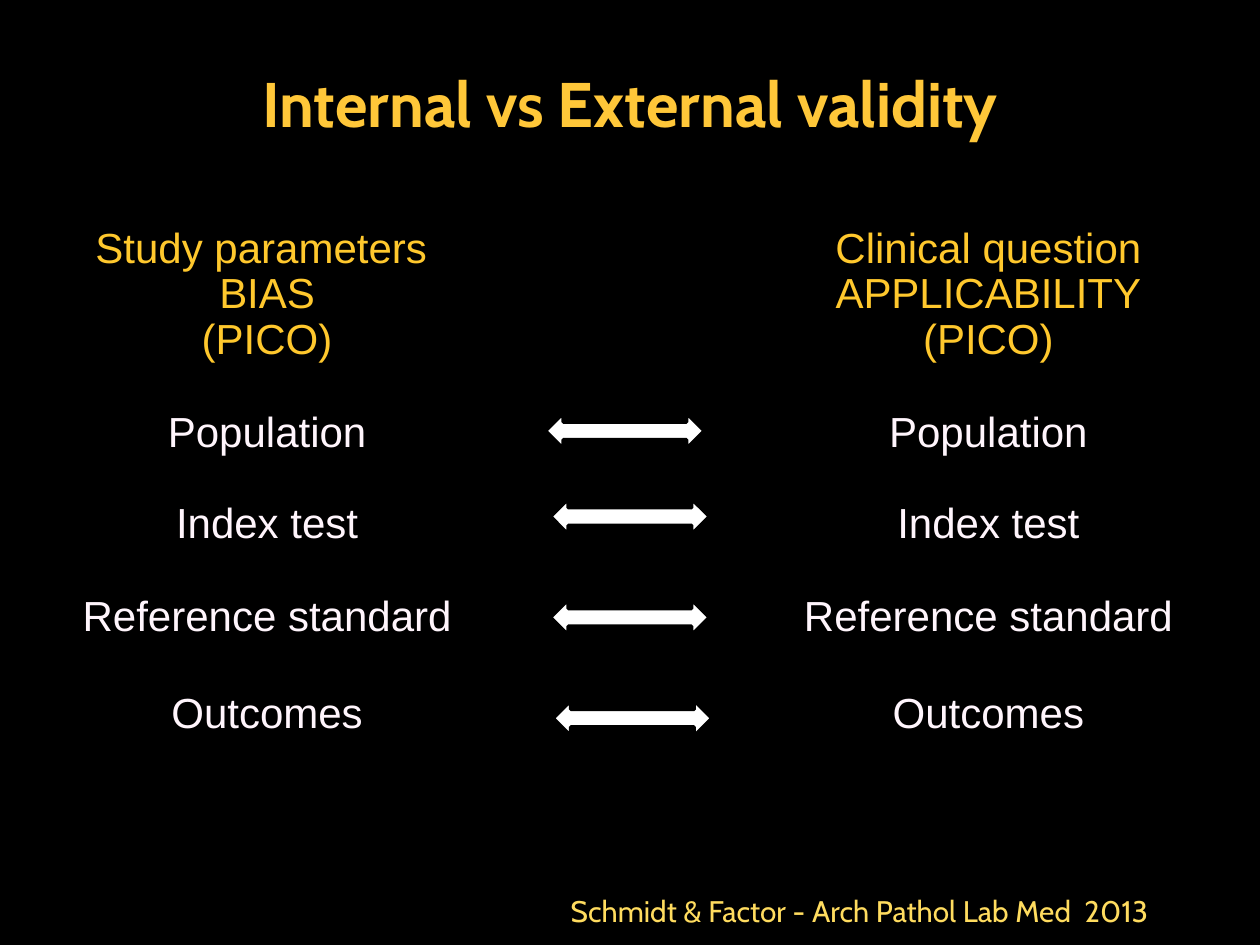
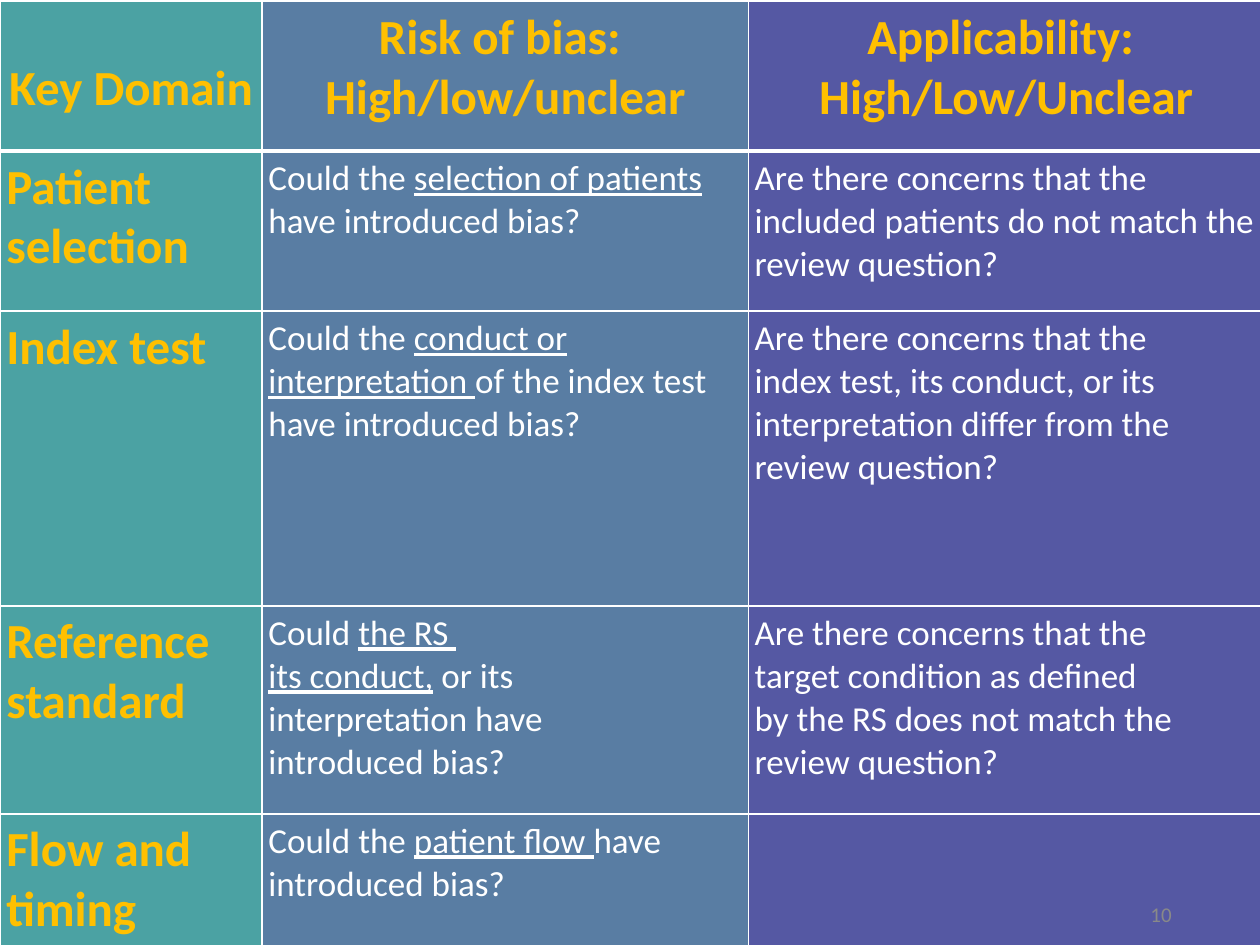
from lxml import etree
from pptx import Presentation
from pptx import util as u
from pptx.dml.color import RGBColor
from pptx.enum import shapes, text
from pptx.oxml.ns import qn

BLACK = RGBColor(0x00, 0x00, 0x00)
WHITE = RGBColor(0xFF, 0xFF, 0xFF)
TITLE_GOLD = RGBColor(0xFF, 0xC7, 0x39)
HEADING_GOLD = RGBColor(0xFF, 0xC8, 0x2D)
CITATION_GOLD = RGBColor(0xFF, 0xDC, 0x5F)
DOMAIN_GOLD = RGBColor(0xFF, 0xC0, 0x00)
PALE_PINK = RGBColor(0xFF, 0xF5, 0xFC)
NUMBER_GREY = RGBColor(0x89, 0x89, 0x89)
COLUMN_FILLS = [
    RGBColor(0x4B, 0xA2, 0xA3),
    RGBColor(0x59, 0x7D, 0xA3),
    RGBColor(0x55, 0x58, 0xA3),
]
INSET = u.Inches(0.05)
CENTER = text.PP_ALIGN.CENTER
LEFT = text.PP_ALIGN.LEFT

PICO_ROWS = [["Population", "Index test"], ["Reference standard"], ["Outcomes"]]
PICO_HEADINGS = {
    0: ["Study parameters ", "BIAS", "(PICO)"],
    2: ["Clinical question", "APPLICABILITY", "(PICO)"],
}
ARROW_POSITIONS = [(4.33, 3.28), (4.37, 3.96), (4.37, 4.76), (4.39, 5.56)]

DOMAIN_HEADINGS = [
    ["Key Domain"],
    ["Risk of bias: ", "High/low/unclear"],
    ["Applicability: ", "High/Low/Unclear"],
]
# Underlined words stand between underscores.
DOMAIN_ROWS = [
    (
        "Patient selection",
        ["Could the _selection of patients_ have introduced bias?"],
        ["Are there concerns that the included patients do not match the review question?"],
    ),
    (
        "Index test",
        ["Could the _conduct or interpretation _of the index test have introduced bias?"],
        [
            "Are there concerns that the",
            "index test, its conduct, or its",
            "interpretation differ from the",
            "review question?",
        ],
    ),
    (
        "Reference standard",
        ["Could _the RS _", "_its conduct,_ or its", "interpretation have", "introduced bias?"],
        [
            "Are there concerns that the",
            "target condition as defined",
            "by the RS does not match the review question?",
        ],
    ),
    ("Flow and timing", ["Could the _patient flow _have introduced bias?"], []),
]


def inches(values):
    return [u.Inches(value) for value in values]


def set_insets(holder):
    holder.margin_left = holder.margin_right = INSET
    holder.margin_top = holder.margin_bottom = INSET


def write(frame, lines, font, size, color, bold=False, align=LEFT, spacing=None):
    for index, line in enumerate(lines):
        para = frame.paragraphs[0] if index == 0 else frame.add_paragraph()
        para.alignment = align
        if spacing:
            para.line_spacing = spacing
        for part, words in enumerate(line.split("_")):
            if not words:
                continue
            span = para.add_run()
            span.text = words
            span.font.name = font
            span.font.size = u.Pt(size)
            span.font.bold = bold
            span.font.underline = part % 2 == 1
            span.font.color.rgb = color


def add_label(page, box, words, size, font, color, align=LEFT):
    label = page.shapes.add_textbox(*inches(box))
    frame = label.text_frame
    set_insets(frame)
    write(frame, [words], font, size, color, align=align)
    return frame


def set_borders(cell, color, top=1, bottom=1):
    properties = cell._tc.get_or_add_tcPr()
    for side, width in (("L", 1), ("R", 1), ("T", top), ("B", bottom)):
        line = etree.SubElement(properties, qn(f"a:ln{side}"), w=str(u.Pt(width)))
        fill = etree.SubElement(line, qn("a:solidFill"))
        etree.SubElement(fill, qn("a:srgbClr"), val=str(color))


def add_grid(page, box, widths, heights, fills, border, heavy_rule=1):
    frame = page.shapes.add_table(len(heights), len(widths), *inches(box))
    grid = frame.table
    grid.first_row = grid.horz_banding = False
    for column, width in zip(grid.columns, inches(widths)):
        column.width = width
    for index, (row, height) in enumerate(zip(grid.rows, inches(heights))):
        row.height = height
        for cell, fill in zip(row.cells, fills):
            set_insets(cell)
            set_borders(
                cell,
                border,
                top=heavy_rule if index == 1 else 1,
                bottom=heavy_rule if index == 0 else 1,
            )
            cell.fill.solid()
            cell.fill.fore_color.rgb = fill
    return grid


def add_title(page, box, words):
    title = page.shapes.title
    title.left, title.top, title.width, title.height = inches(box)
    title.fill.solid()
    title.fill.fore_color.rgb = BLACK
    frame = title.text_frame
    set_insets(frame)
    frame.vertical_anchor = text.MSO_ANCHOR.MIDDLE
    write(frame, [words], "Cabin", 36, TITLE_GOLD, bold=True, align=CENTER)


def add_pico_table(page, box):
    grid = add_grid(
        page, box, [3.12, 2.08, 4.17], [1.46, 1.46, 0.77, 0.43, 0.43], [BLACK] * 3, BLACK
    )
    for column, headings in PICO_HEADINGS.items():
        write(grid.cell(0, column).text_frame, headings, "Arial", 24,
              HEADING_GOLD, align=CENTER, spacing=0.97)
        for row, lines in enumerate(PICO_ROWS, 1):
            frame = grid.cell(row, column).text_frame
            write(frame, lines, "Arial", 24, PALE_PINK, align=CENTER, spacing=0.97)
            for para in frame.paragraphs[1:]:
                para.space_before = u.Pt(26.5)


def add_match_arrow(page, left, top):
    arrow = page.shapes.add_shape(
        shapes.MSO_SHAPE.LEFT_RIGHT_ARROW, *inches([left, top, 1.26, 0.28])
    )
    arrow.shadow.inherit = False
    arrow.fill.solid()
    arrow.fill.fore_color.rgb = WHITE
    arrow.line.color.rgb = BLACK
    arrow.line.width = u.Pt(2)


def add_domain_table(page, box):
    grid = add_grid(
        page, box, [2.08, 3.86, 4.09], [1.19, 1.27, 2.34, 1.65, 1.05],
        COLUMN_FILLS, WHITE, heavy_rule=3,
    )
    for column, lines in enumerate(DOMAIN_HEADINGS):
        write(grid.cell(0, column).text_frame, lines, "Calibri", 28,
              DOMAIN_GOLD, bold=True, align=CENTER)
    grid.cell(0, 0).margin_top = u.Inches(0.46)
    for row, (domain, *questions) in enumerate(DOMAIN_ROWS, 1):
        write(grid.cell(row, 0).text_frame, [domain], "Calibri", 28, DOMAIN_GOLD, bold=True)
        for column, lines in enumerate(questions, 1):
            write(grid.cell(row, column).text_frame, lines, "Calibri", 20, WHITE)


def build_validity_slide(deck):
    page = deck.slides.add_slide(deck.slide_layouts.get_by_name("Title Only"))
    citation = add_label(page, [4.48, 6.85, 4.93, 0.53],
                         "Schmidt & Factor - Arch Pathol Lab Med  2013",
                         17, "Cabin", CITATION_GOLD)
    citation.word_wrap = True
    citation.paragraphs[0].line_spacing = u.Pt(34)
    citation.paragraphs[0].space_before = u.Pt(12)
    add_title(page, [0.5, 0.19, 9, 1.25], "Internal vs External validity")
    add_pico_table(page, [0.56, 1.75, 9.37, 4.67])
    for left, top in ARROW_POSITIONS:
        add_match_arrow(page, left, top)


def build_domain_slide(deck):
    page = deck.slides.add_slide(deck.slide_layouts.get_by_name("Blank"))
    add_domain_table(page, [0, 0.01, 10.03, 7.49])
    number = add_label(page, [9.07, 7.11, 0.29, 0.29], "10", 12, "Calibri", NUMBER_GREY, CENTER)
    number.vertical_anchor = text.MSO_ANCHOR.MIDDLE
    number.word_wrap = False


def main():
    deck = Presentation()
    deck.slide_width, deck.slide_height = inches([10, 7.5])
    backdrop = deck.slide_master.background.fill
    backdrop.solid()
    backdrop.fore_color.rgb = BLACK
    build_validity_slide(deck)
    build_domain_slide(deck)
    deck.save("out.pptx")


if __name__ == "__main__":
    main()
